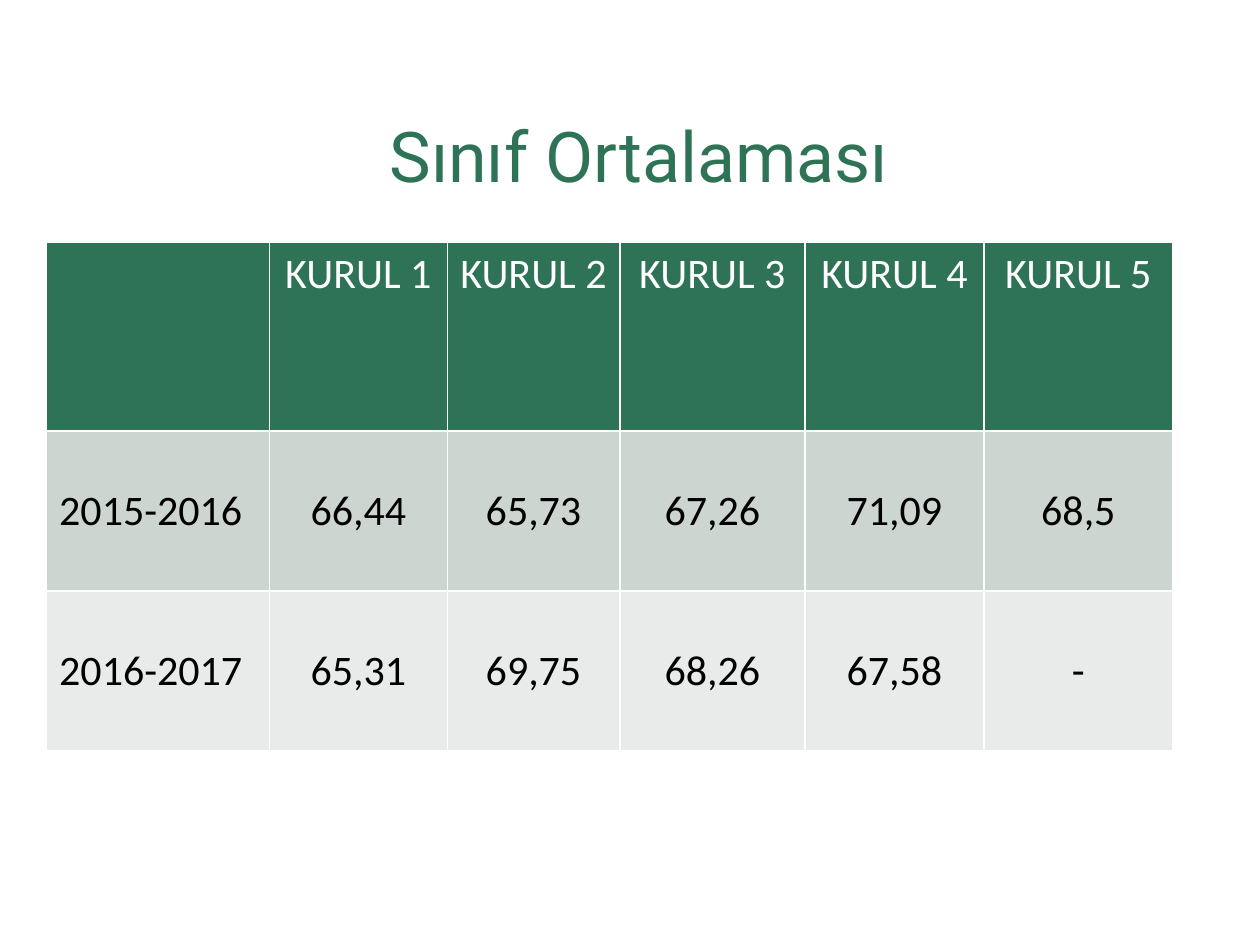
from lxml import etree
from pptx import Presentation
from pptx.dml.color import RGBColor
from pptx.enum.text import MSO_ANCHOR, PP_ALIGN
from pptx.oxml.ns import qn
from pptx.util import Inches, Pt

CENTER, LEFT = PP_ALIGN.CENTER, PP_ALIGN.LEFT
TOP, MIDDLE = MSO_ANCHOR.TOP, MSO_ANCHOR.MIDDLE
TITLE_ONLY = 5

GREEN = RGBColor(0x2F, 0x73, 0x57)
SAGE = RGBColor(0xCD, 0xD5, 0xD1)
MIST = RGBColor(0xE8, 0xEB, 0xEA)
WHITE = RGBColor(0xFF, 0xFF, 0xFF)
BLACK = RGBColor(0, 0, 0)

SLIDE_W, SLIDE_H = Inches(10), Inches(7.5)
TITLE_BOX = [Inches(v) for v in (1.02, 0.71, 8.1, 1.11)]
TABLE_BOX = [Inches(v) for v in (0.37, 1.92, 8.94, 4.04)]
COLUMN_SHARES = (1.77, 1.41, 1.37, 1.47, 1.42, 1.5)
ROW_SHARES = (1.5, 1.27, 1.27)

AVERAGES = (
    ("", *(f"KURUL {number}" for number in range(1, 6))),
    ("2015-2016", "66,44", "65,73", "67,26", "71,09", "68,5"),
    ("2016-2017", "65,31", "69,75", "68,26", "67,58", "-"),
)
ROW_STYLES = (
    {"fill": GREEN, "color": WHITE, "anchor": TOP},
    {"fill": SAGE, "color": BLACK, "anchor": MIDDLE},
    {"fill": MIST, "color": BLACK, "anchor": MIDDLE},
)


def set_all(target, values):
    for name, value in values.items():
        setattr(target, name, value)


def format_font(font, color, **values):
    set_all(font, values)
    font.color.rgb = color


def add_borders(cell, color, width):
    properties = cell._tc.get_or_add_tcPr()
    for side in ("a:lnL", "a:lnR", "a:lnT", "a:lnB"):
        line = etree.SubElement(properties, qn(side), w=str(int(width)))
        fill = etree.SubElement(line, qn("a:solidFill"))
        etree.SubElement(fill, qn("a:srgbClr"), val=str(color))


def share_out(tracks, attribute, shares, total):
    """Divide a length among table columns or rows in proportion to shares."""
    for track, share in zip(tracks, shares):
        setattr(track, attribute, int(total * share / sum(shares)))


def place_title(slide, box, text):
    title = slide.shapes.title
    set_all(title, dict(zip(("left", "top", "width", "height"), box)))
    title.text_frame.text = text
    title.text_frame.vertical_anchor = MIDDLE
    heading = title.text_frame.paragraphs[0]
    set_all(heading, {"alignment": CENTER, "line_spacing": 0.9})
    format_font(heading.runs[0].font, GREEN, name="Roboto", size=Pt(40))


def format_cell(cell, text, style, alignment):
    add_borders(cell, WHITE, Pt(1))
    cell.fill.solid()
    cell.fill.fore_color.rgb = style["fill"]
    set_all(cell, {"text": text, "vertical_anchor": style["anchor"]})
    if style["anchor"] == TOP:
        set_all(cell, {"margin_left": Inches(0.05), "margin_right": Inches(0.05)})
    paragraph = cell.text_frame.paragraphs[0]
    paragraph.alignment = alignment
    for run in paragraph.runs:
        format_font(run.font, style["color"], name="Calibri", size=Pt(24), bold=False)


def place_averages(slide, box):
    table = slide.shapes.add_table(len(ROW_SHARES), len(COLUMN_SHARES), *box).table
    share_out(table.columns, "width", COLUMN_SHARES, box[2])
    share_out(table.rows, "height", ROW_SHARES, box[3])
    for row, texts, style in zip(table.rows, AVERAGES, ROW_STYLES):
        for column, (cell, text) in enumerate(zip(row.cells, texts)):
            format_cell(cell, text, style, CENTER if column else LEFT)


def main():
    deck = Presentation()
    set_all(deck, {"slide_width": SLIDE_W, "slide_height": SLIDE_H})
    slide = deck.slides.add_slide(deck.slide_layouts[TITLE_ONLY])
    place_title(slide, TITLE_BOX, "Sınıf Ortalaması")
    place_averages(slide, TABLE_BOX)
    deck.save("out.pptx")


if __name__ == "__main__":
    main()
